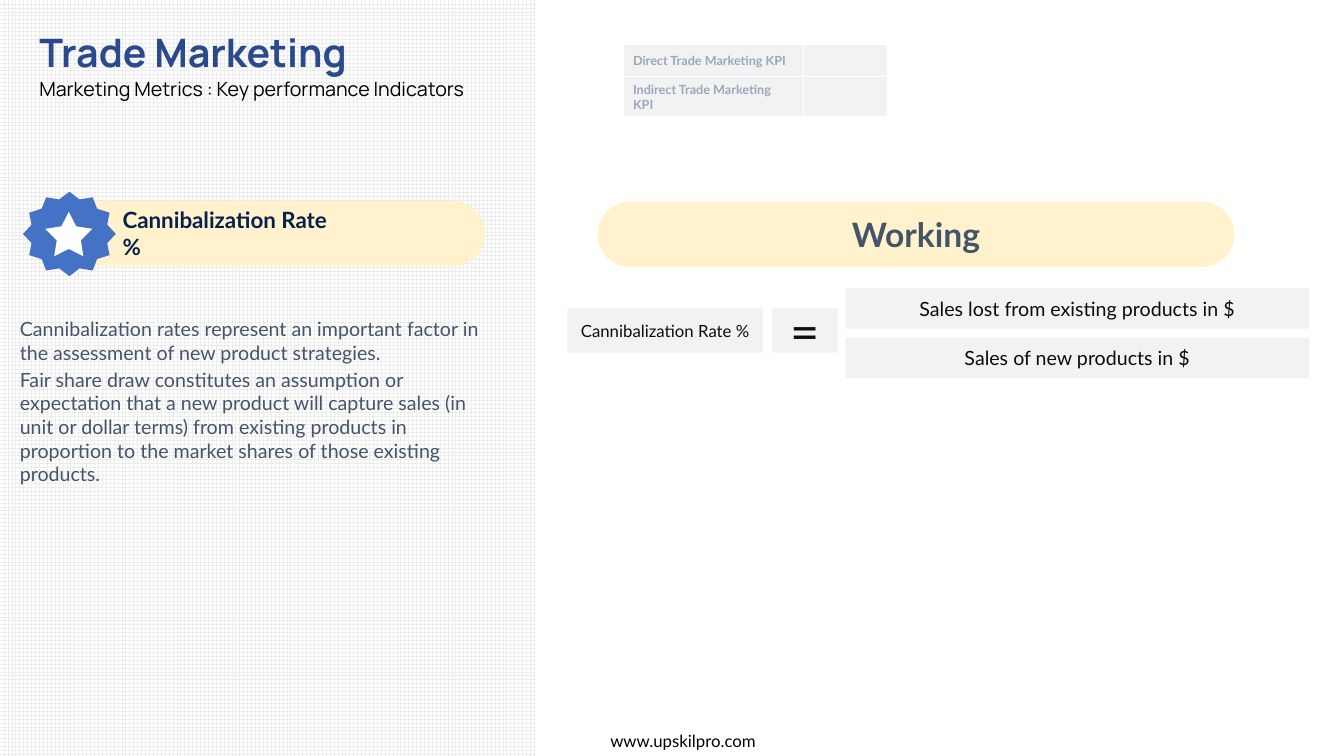
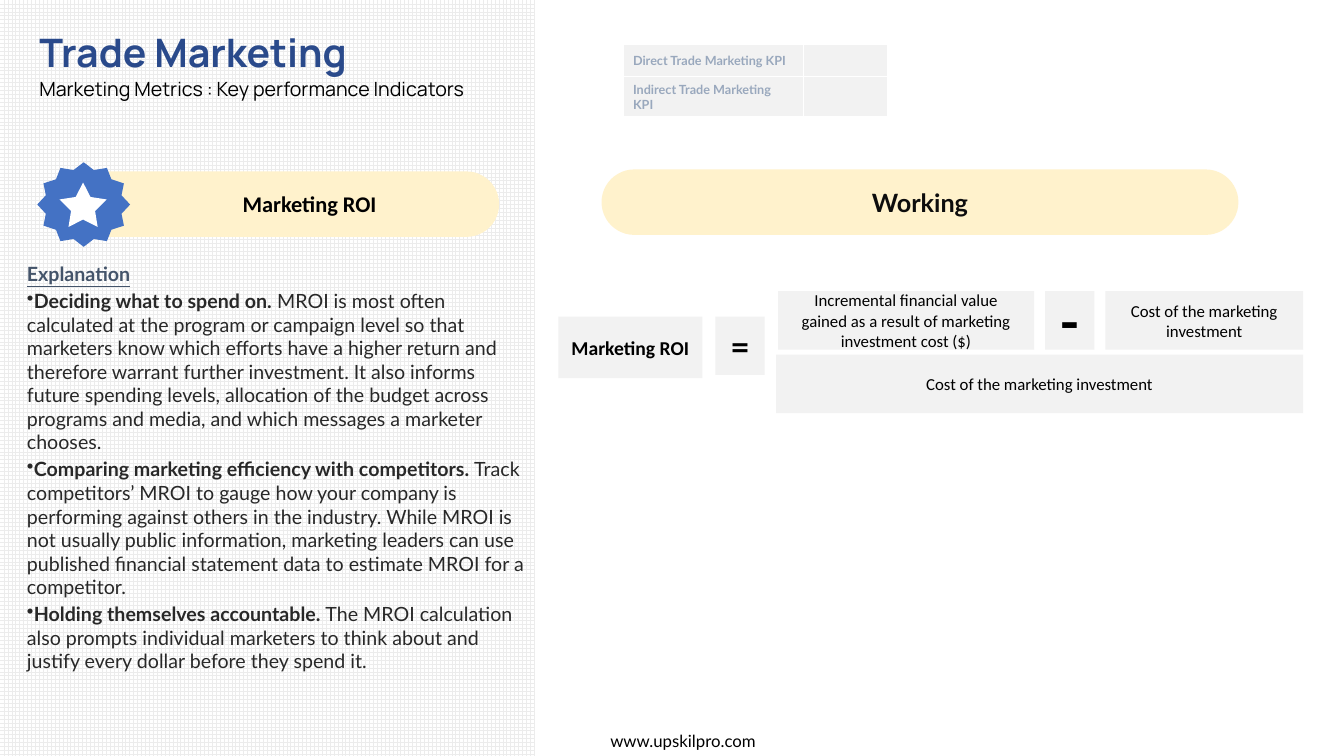
from lxml import etree
from pptx import Presentation
from pptx.dml.color import RGBColor
from pptx.enum import dml, shapes, text
from pptx.oxml import ns
from pptx.util import Cm, Pt

# Shared look
NAVY, SLATE, INK = "2A4A8B", "44546A", "0D0D0D"
BLACK, WHITE, BODY = "000000", "FFFFFF", "282828"
BLUE, CREAM, GREY = "4472C4", "FFF2CC", "F2F2F2"
GRID, PALE = "ECECEC", "99A8BD"
LEFT, CENTER = text.PP_ALIGN.LEFT, text.PP_ALIGN.CENTER
TOP, MIDDLE = text.MSO_ANCHOR.TOP, text.MSO_ANCHOR.MIDDLE
KIND = shapes.MSO_SHAPE
SLIDE_W, SLIDE_H, PANEL_W = 33.87, 19.05, 13.49


def rgb(value):
    return RGBColor.from_string(value)


def put(tf, content, lead="", size=14, font="Lato", color=BLACK, bold=False,
        underline=False, align=LEFT, before=0, after=0, spacing=None,
        bullet=False):
    """Add one paragraph, optionally opened by a bold lead."""
    p = tf.paragraphs[0]
    if p.runs:
        p = tf.add_paragraph()
    p.alignment = align
    p.space_before, p.space_after = Pt(before), Pt(after)
    if spacing:
        p.line_spacing = spacing
    if bullet:
        pPr = p._p.get_or_add_pPr()
        pPr.set("marL", "0")
        pPr.set("indent", "0")
        etree.SubElement(pPr, ns.qn("a:buChar")).set("char", "•")
    for words, heavy in ((lead, True), (content, bold)):
        if words:
            r = p.add_run()
            r.text = words
            r.font.size, r.font.name = Pt(size), font
            r.font.bold, r.font.underline = heavy, underline
            r.font.color.rgb = rgb(color)


def frame(sp, anchor=TOP, inset=0.25):
    tf = sp.text_frame
    tf.word_wrap = True
    tf.auto_size = text.MSO_AUTO_SIZE.NONE
    tf.vertical_anchor = anchor
    tf.margin_left = tf.margin_right = Cm(inset)
    return tf


def text_box(s, x, y, w, h, anchor=TOP):
    return frame(s.shapes.add_textbox(Cm(x), Cm(y), Cm(w), Cm(h)), anchor)


def shape(s, kind, x, y, w, h, fill, adj=None):
    sp = s.shapes.add_shape(kind, Cm(x), Cm(y), Cm(w), Cm(h))
    sp.shadow.inherit = False
    sp.line.fill.background()
    sp.fill.solid()
    sp.fill.fore_color.rgb = rgb(fill)
    if adj is not None:
        sp.adjustments[0] = adj
    return sp


def term(s, content, x, y, w, h, inset=0.25, **fmt):
    """Grey box holding one part of a formula."""
    sp = shape(s, KIND.RECTANGLE, x, y, w, h, GREY)
    put(frame(sp, MIDDLE, inset), content, align=CENTER, **fmt)


def pill(s, x, y, w):
    return shape(s, KIND.ROUNDED_RECTANGLE, x, y, w, 1.65, CREAM, 0.5)


def working(s, x, y, **fmt):
    put(frame(pill(s, x, y, 16.05), MIDDLE), "Working", bold=True,
        align=CENTER, **fmt)


def badge(s, label, x, y, label_w, **fmt):
    """Cream pill with a star seal and the metric's name."""
    pill(s, x + 0.41, y + 0.23, 11.23)
    shape(s, KIND.STAR_12_POINT, x, y, 2.34, 2.13, BLUE, 0.422)
    shape(s, KIND.STAR_5_POINT, x + 0.56, y + 0.51, 1.19, 1.12, WHITE, 0.254)
    tf = text_box(s, x + 2.26, y + 0.57, label_w, 0.94, MIDDLE)
    put(tf, label, size=16, bold=True, **fmt)


def border(cell, color, width):
    tcPr = cell._tc.get_or_add_tcPr()
    for i, side in enumerate(("lnL", "lnR", "lnT", "lnB")):
        ln = etree.Element(ns.qn("a:" + side), w=str(Pt(width)))
        fill = etree.SubElement(ln, ns.qn("a:solidFill"))
        etree.SubElement(fill, ns.qn("a:srgbClr"), val=color)
        tcPr.insert(i, ln)


def kpi_table(s):
    labels = ("Direct Trade Marketing KPI", "Indirect Trade Marketing KPI")
    table = s.shapes.add_table(2, 2, Cm(15.7), Cm(1.12), Cm(6.66),
                               Cm(1.83)).table
    for col, w in zip(table.columns, (4.55, 2.11)):
        col.width = Cm(w)
    for row, h, label in zip(table.rows, (0.81, 1.02), labels):
        row.height = Cm(h)
        for cell in row.cells:
            cell.fill.solid()
            cell.fill.fore_color.rgb = rgb(GREY)
            cell.margin_top = cell.margin_bottom = 0
            cell.vertical_anchor = MIDDLE
            border(cell, WHITE, 1)
        put(row.cells[0].text_frame, label, size=9, color=PALE, bold=True)


def base_slide(prs):
    """Slide with the grid panel, title, KPI table and footer."""
    s = prs.slides.add_slide(prs.slide_layouts[5])
    panel = shape(s, KIND.RECTANGLE, 0, 0, PANEL_W, SLIDE_H, WHITE)
    panel.fill.patterned()
    panel.fill.pattern = dml.MSO_PATTERN.LARGE_GRID
    panel.fill.fore_color.rgb = rgb(GRID)
    panel.fill.back_color.rgb = rgb(WHITE)

    # Bring the title in front of the panel
    title = s.shapes.title
    s.shapes._spTree.append(title._element)
    title.left, title.top = Cm(0.74), Cm(0.58)
    title.width, title.height = Cm(22.1), Cm(2.08)
    tf = frame(title)
    put(tf, "Trade Marketing", size=28, font="Manrope", color=NAVY, bold=True)
    put(tf, "Marketing Metrics : Key performance Indicators", font="Manrope",
        spacing=1.07, after=8)

    kpi_table(s)
    put(text_box(s, 13.72, 18.29, 6.99, 0.76), "www.upskilpro.com", size=12,
        align=CENTER)
    return s


def cannibalization_slide(prs):
    s = base_slide(prs)
    badge(s, "Cannibalization Rate %", 0.58, 4.83, 6.1, color="08204D")
    tf = text_box(s, 0.25, 7.87, 12.55, 4.2)
    put(tf, "Cannibalization rates represent an important factor in the "
        "assessment of new product strategies.", color=SLATE)
    put(tf, "Fair share draw constitutes an assumption or expectation that a "
        "new product will capture sales (in unit or dollar terms) from "
        "existing products in proportion to the market shares of those "
        "existing products.", color=SLATE, before=2.5)

    # Formula
    working(s, 15.06, 5.08, size=24, color=SLATE)
    term(s, "Cannibalization Rate %", 14.3, 7.77, 4.93, 1.12, size=12,
         color=INK)
    term(s, "=", 19.46, 7.77, 1.65, 1.12, size=36, color=INK)
    fraction = ("Sales lost from existing products in $",
                "Sales of new products in $")
    for i, part in enumerate(fraction):
        term(s, part, 21.31, 7.26 + 1.25 * i, 11.68, 1.02, color=INK)


def roi_slide(prs):
    s = base_slide(prs)
    badge(s, "Marketing ROI", 0.94, 4.09, 9.2, font="Calibri", align=CENTER)
    tf = text_box(s, 0.43, 6.48, 13.06, 10.8)
    put(tf, "Explanation", color=SLATE, bold=True, underline=True)
    points = (
        ("Deciding what to spend on.",
         " MROI is most often calculated at the program or campaign level so "
         "that marketers know which efforts have a higher return and "
         "therefore warrant further investment. It also informs future "
         "spending levels, allocation of the budget across programs and "
         "media, and which messages a marketer chooses."),
        ("Comparing marketing efficiency with competitors.",
         " Track competitors’ MROI to gauge how your company is performing "
         "against others in the industry. While MROI is not usually public "
         "information, marketing leaders can use published financial "
         "statement data to estimate MROI for a competitor."),
        ("Holding themselves accountable.",
         " The MROI calculation also prompts individual marketers to think "
         "about and justify every dollar before they spend it."),
    )
    for lead, rest in points:
        put(tf, rest, lead=lead, color=BODY, before=2.5, bullet=True)

    # Formula
    working(s, 15.16, 4.27, size=18, color=INK)
    cost = "Cost of the marketing investment"
    small = dict(size=12, font="Calibri")
    top, h = 7.34, 1.47
    term(s, "Marketing ROI", 14.07, 7.98, 3.63, 1.55, font="Calibri",
         bold=True)
    term(s, "=", 18.03, 7.98, 1.24, h, size=24, bold=True)
    term(s, "Incremental financial value gained as a result of marketing "
         "investment cost ($)", 19.61, top, 6.45, h, inset=0.4, **small)
    term(s, "-", 26.34, top, 1.24, h, size=40, bold=True)
    term(s, cost, 27.86, top, 4.98, h, **small)
    term(s, cost, 19.56, 8.94, 13.28, h, **small)


def main():
    prs = Presentation()
    prs.slide_width, prs.slide_height = Cm(SLIDE_W), Cm(SLIDE_H)
    cannibalization_slide(prs)
    roi_slide(prs)
    prs.save("out.pptx")


if __name__ == "__main__":
    main()
